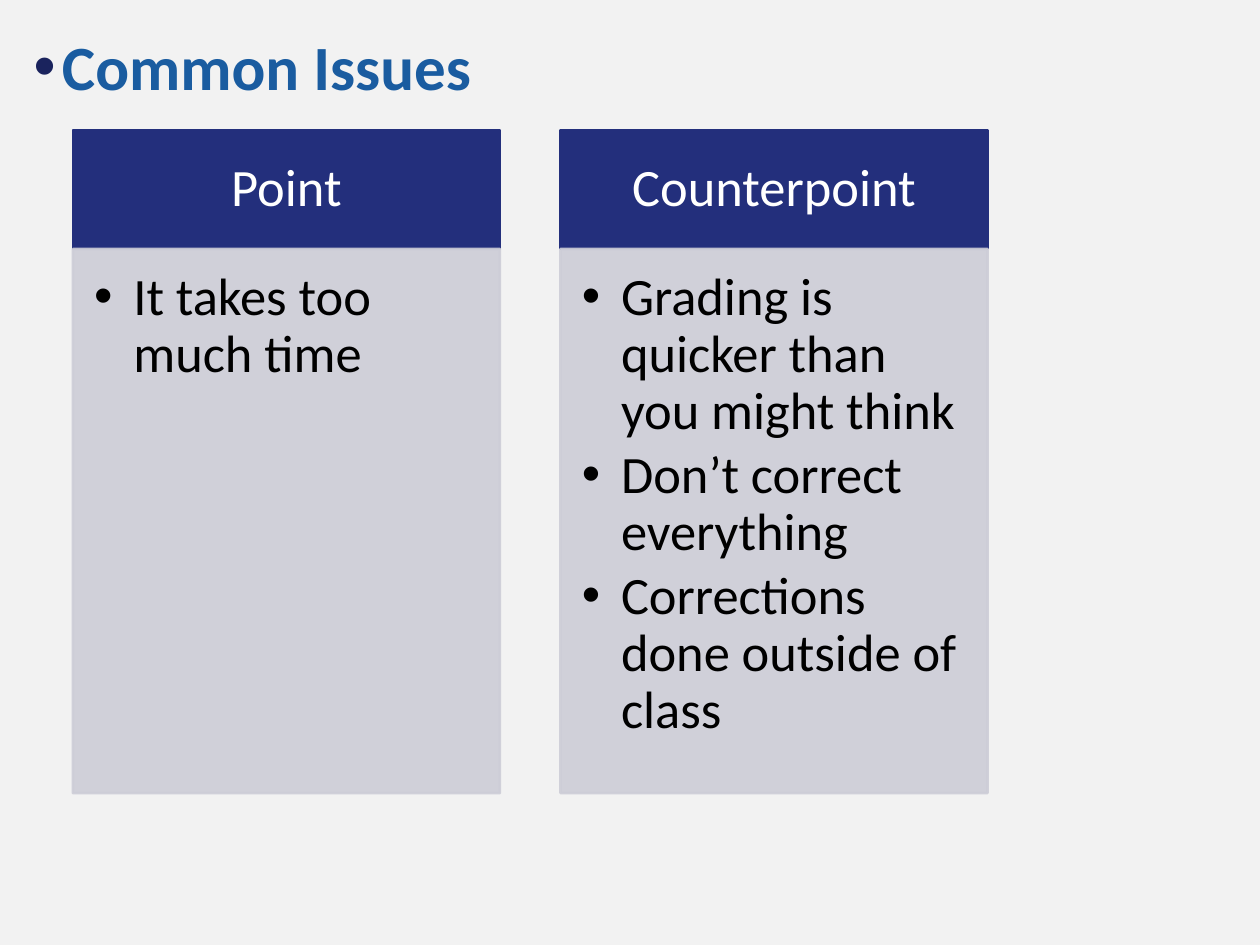
from lxml import etree
from pptx import Presentation
from pptx import util as u
from pptx.dml import color
from pptx.enum import shapes, text
from pptx.oxml import ns

COLORS = {
    "background": "F2F2F2",
    "title": "1A5CA0",
    "title_bullet": "1A235D",
    "header": "232F7C",
    "header_text": "FFFFFF",
    "body": "CDCDD7",
    "body_text": "000000",
}
COLUMNS = [
    ("Point", ["It takes too much time"]),
    ("Counterpoint", [
        "Grading is quicker than you might think",
        "Don’t correct everything",
        "Corrections done outside of class",
    ]),
]
FIRST_LEFT, COLUMN_STEP, COLUMN_WIDTH = 1.47, 9.83, 8.61
HEADER_TOP, HEADER_HEIGHT = 2.62, 2.39
BODY_TOP, BODY_HEIGHT = 5.02, 10.97


def rgb(name):
    """Return the named colour."""
    return color.RGBColor.from_string(COLORS[name])


def set_frame(shape, anchor, insets):
    """Set wrapping, anchor and the left, top, right and bottom insets."""
    frame = shape.text_frame
    frame.word_wrap = True
    frame.vertical_anchor = anchor
    frame.margin_left, frame.margin_top, frame.margin_right, frame.margin_bottom = map(u.Cm, insets)
    return frame


def add_bullet(paragraph, color_name, indent):
    """Give a paragraph a coloured round bullet with a hanging indent."""
    properties = paragraph._p.get_or_add_pPr()
    properties.set("marL", str(u.Cm(indent)))
    properties.set("indent", str(-u.Cm(indent)))
    bullet_color = etree.SubElement(properties, ns.qn("a:buClr"))
    etree.SubElement(bullet_color, ns.qn("a:srgbClr"), val=COLORS[color_name])
    etree.SubElement(properties, ns.qn("a:buFont"), typeface="Arial")
    etree.SubElement(properties, ns.qn("a:buChar"), char="•")


def add_text(paragraph, wording, size, color_name, bold=False):
    """Add one run of styled text to a paragraph."""
    run = paragraph.add_run()
    run.text = wording
    run.font.name = "Calibri"
    run.font.size = u.Pt(size)
    run.font.bold = bold
    run.font.color.rgb = rgb(color_name)


def add_title(slide, wording):
    """Add the bulleted slide title."""
    box = slide.shapes.add_textbox(u.Cm(0.43), u.Cm(0.43), u.Cm(22.86), u.Cm(1.78))
    frame = set_frame(box, text.MSO_ANCHOR.MIDDLE, (0.25, 0.13, 0.25, 0.13))
    paragraph = frame.paragraphs[0]
    add_bullet(paragraph, "title_bullet", 0.57)
    add_text(paragraph, wording, 36, "title", bold=True)


def add_panel(slide, left, top, height, color_name, opacity=100):
    """Add a column rectangle whose fill and line share a colour and opacity."""
    shape = slide.shapes.add_shape(
        shapes.MSO_SHAPE.RECTANGLE, u.Cm(left), u.Cm(top), u.Cm(COLUMN_WIDTH), u.Cm(height))
    shape.shadow.inherit = False
    shape.fill.solid()
    shape.fill.fore_color.rgb = rgb(color_name)
    shape.line.color.rgb = rgb(color_name)
    shape.line.width = u.Pt(1.5)
    if opacity < 100:
        for value in shape._element.spPr.iter(ns.qn("a:srgbClr")):
            etree.SubElement(value, ns.qn("a:alpha"), val=str(opacity * 1000))
    return shape


def add_header(slide, left, heading):
    """Add the dark heading of a column."""
    shape = add_panel(slide, left, HEADER_TOP, HEADER_HEIGHT, "header")
    frame = set_frame(shape, text.MSO_ANCHOR.MIDDLE, (0.58, 0.33, 0.58, 0.33))
    paragraph = frame.paragraphs[0]
    paragraph.alignment = text.PP_ALIGN.CENTER
    paragraph.line_spacing = 0.9
    add_text(paragraph, heading, 30, "header_text")


def add_body(slide, left, items):
    """Add the pale body of a column with its bulleted items."""
    shape = add_panel(slide, left, BODY_TOP, BODY_HEIGHT, "body", opacity=90)
    frame = set_frame(shape, text.MSO_ANCHOR.TOP, (0.43, 0.43, 0.58, 0.66))
    for index, item in enumerate(items):
        paragraph = frame.add_paragraph() if index else frame.paragraphs[0]
        add_bullet(paragraph, "body_text", 0.79)
        paragraph.alignment = text.PP_ALIGN.LEFT
        paragraph.line_spacing = 0.9
        paragraph.space_after = u.Pt(4.5)
        add_text(paragraph, item, 30, "body_text")


def main():
    """Build and save the slide."""
    presentation = Presentation()
    presentation.slide_width, presentation.slide_height = u.Cm(25.4), u.Cm(19.05)
    slide = presentation.slides.add_slide(presentation.slide_layouts[6])
    slide.background.fill.solid()
    slide.background.fill.fore_color.rgb = rgb("background")
    add_title(slide, "Common Issues")
    for index, (heading, items) in enumerate(COLUMNS):
        left = FIRST_LEFT + index * COLUMN_STEP
        add_header(slide, left, heading)
        add_body(slide, left, items)
    presentation.save("out.pptx")


if __name__ == "__main__":
    main()
